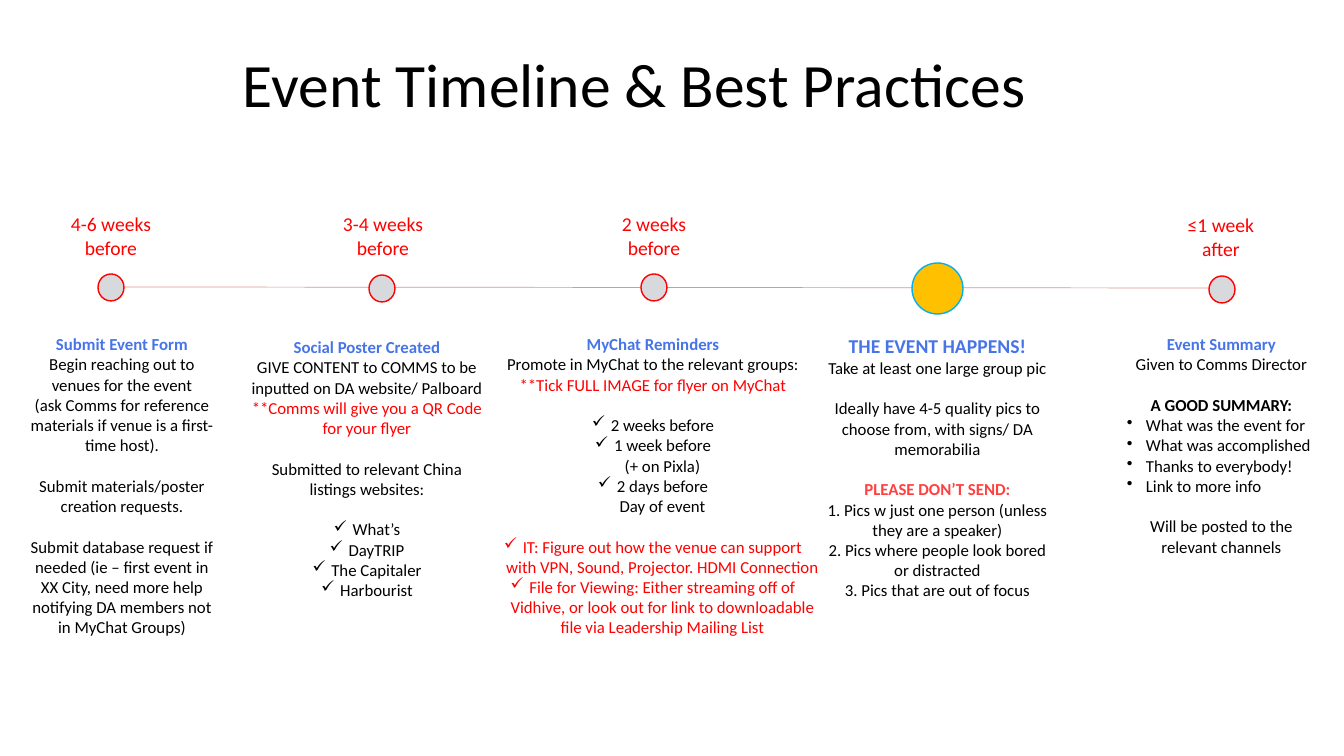
from lxml import etree
from pptx import Presentation
from pptx.dml.color import RGBColor
from pptx.enum.shapes import MSO_CONNECTOR, MSO_SHAPE
from pptx.enum.text import MSO_ANCHOR, PP_ALIGN
from pptx.oxml.ns import qn
from pptx.util import Pt

CENTER, LEFT = PP_ALIGN.CENTER, PP_ALIGN.LEFT
MIDDLE, TOP = MSO_ANCHOR.MIDDLE, MSO_ANCHOR.TOP
OVAL, STRAIGHT = MSO_SHAPE.OVAL, MSO_CONNECTOR.STRAIGHT
PX_PER_INCH = 100.8
FONT = "Calibri"
BLACK, RED, BLUE, CORAL = "000000", "FF0000", "4775E7", "FF4040"
LINE_GAP = 14.65
INDENT = 19

STYLES = {
    "title": (44, BLACK, False),
    "time": (14, RED, False),
    "head": (12, BLUE, True),
    "event": (14, BLUE, True),
    "body": (12, BLACK, False),
    "strong": (12, BLACK, True),
    "alert": (12, RED, False),
    "warning": (12, CORAL, True),
}

TIMES = [
    ((60, 207, 102, 57), ["4-6 weeks", "before"]),
    ((329, 207, 108, 57), ["3-4 weeks", "before"]),
    ((609, 207, 90, 57), ["2 weeks", "before"]),
    ((1171, 208, 100, 57), ["≤1 week after"]),
]

MILESTONES = [(98, 274), (369, 275), (641, 274), (1209, 276)]

STAGES = [
    ((19, 329, 206, 315), [
        ("Submit Event Form", "head"),
        ("Begin reaching out to venues for the event", "body"),
        ("(ask Comms for reference materials if venue is a first-time host).", "body"),
        ("Submit materials/poster creation requests.", "body", "gap"),
        ("Submit database request if needed (ie – first event in XX City, need more "
         "help notifying DA members not in MyChat Groups)", "body", "gap"),
    ]),
    ((241, 332, 252, 275), [
        ("Social Poster Created", "head"),
        ("GIVE CONTENT to COMMS to be inputted on DA website/ Palboard", "body"),
        ("**Comms will give you a QR Code for your flyer", "alert"),
        ("Submitted to relevant China listings websites:", "body", "gap"),
        ("What’s", "body", "gap", "✓"),
        ("DayTRIP", "body", "✓"),
        ("The Capitaler", "body", "✓"),
        ("Harbourist", "body", "✓"),
    ]),
    ((477, 329, 352, 315), [
        ("MyChat Reminders", "head"),
        ("Promote in MyChat to the relevant groups:", "body"),
        ("**Tick FULL IMAGE for flyer on MyChat", "alert"),
        ("2 weeks before", "body", "gap", "✓"),
        ("1 week before", "body", "✓"),
        ("(+ on Pixla)", "body", "continued"),
        ("2 days before", "body", "✓"),
        ("Day of event", "body", "continued"),
        ("IT: Figure out how the venue can support with VPN, Sound, Projector. "
         "HDMI Connection", "alert", "gap", "✓"),
        ("File for Viewing: Either streaming off of Vidhive, or look out for link to "
         "downloadable file via Leadership Mailing List", "alert", "✓"),
    ]),
    ((815, 329, 245, 278), [
        ("THE EVENT HAPPENS!", "event"),
        ("Take at least one large group pic", "body"),
        ("Ideally have 4-5 quality pics to choose from, with signs/ DA memorabilia",
         "body", "gap"),
        ("PLEASE DON’T SEND:", "warning", "gap"),
        ("1. Pics w just one person (unless they are a speaker)", "body"),
        ("2. Pics where people look bored or distracted", "body"),
        ("3. Pics that are out of focus", "body"),
    ]),
    ((1117, 329, 209, 234), [
        ("Event Summary", "head"),
        ("Given to Comms Director", "body"),
        ("A GOOD SUMMARY:", "strong", "gap"),
        ("What was the event for", "body", "•"),
        ("What was accomplished", "body", "•"),
        ("Thanks to everybody!", "body", "•"),
        ("Link to more info", "body", "•"),
        ("Will be posted to the relevant channels", "body", "gap"),
    ]),
]


def px(length):
    return round(length * 914400 / PX_PER_INCH)


def color(hex_code):
    return RGBColor.from_string(hex_code)


def set_indent(paragraph, bullet=None):
    properties = paragraph._p.get_or_add_pPr()
    properties.set("marL", str(px(INDENT)))
    properties.set("indent", str(-px(INDENT) if bullet else 0))
    if bullet:
        etree.SubElement(properties, qn("a:buChar")).set("char", bullet)


def format_paragraph(paragraph, text, style, *options):
    paragraph.text = text
    paragraph.alignment = LEFT if "•" in options else CENTER
    for option in options:
        if option == "gap":
            paragraph.space_before = Pt(LINE_GAP)
        elif option == "continued":
            set_indent(paragraph)
        else:
            set_indent(paragraph, option)
    size, ink, bold = STYLES[style]
    for run in paragraph.runs:
        run.font.name = FONT
        run.font.size = Pt(size)
        run.font.bold = bold
        run.font.color.rgb = color(ink)


def add_text(slide, box, lines, anchor=TOP):
    frame = slide.shapes.add_textbox(*map(px, box)).text_frame
    frame.word_wrap = True
    frame.vertical_anchor = anchor
    frame.text = "\n".join(line[0] for line in lines)
    for paragraph, line in zip(frame.paragraphs, lines):
        format_paragraph(paragraph, *line)
    return frame


def add_title(slide, text):
    frame = add_text(slide, (233, 40, 1019, 96), [(text, "title")], MIDDLE)
    frame.paragraphs[0].alignment = LEFT
    frame.paragraphs[0].line_spacing = 0.9


def add_timeline(slide):
    axis = slide.shapes.add_connector(STRAIGHT, *map(px, (111, 287, 1217, 288)))
    axis.line.color.rgb = color("D59797")
    axis.line.width = Pt(0.5)
    etree.SubElement(axis._element.spPr, qn("a:effectLst"))


def add_milestone(slide, box, fill, outline):
    milestone = slide.shapes.add_shape(OVAL, *map(px, box))
    milestone.shadow.inherit = False
    milestone.fill.solid()
    milestone.fill.fore_color.rgb = color(fill)
    milestone.line.color.rgb = color(outline)
    milestone.line.width = Pt(1)


def main():
    deck = Presentation()
    deck.slide_width, deck.slide_height = px(1344), px(756)
    slide = deck.slides.add_slide(deck.slide_layouts[6])
    add_title(slide, "Event Timeline & Best Practices")
    add_timeline(slide)
    for left, top in MILESTONES:
        add_milestone(slide, (left, top, 26, 27), "D8D9DC", RED)
    add_milestone(slide, (912, 263, 51, 51), "FFC000", "00B0F0")
    for box, lines in STAGES:
        add_text(slide, box, lines)
    for box, words in TIMES:
        add_text(slide, box, [(word, "time") for word in words])
    deck.save("out.pptx")


if __name__ == "__main__":
    main()
